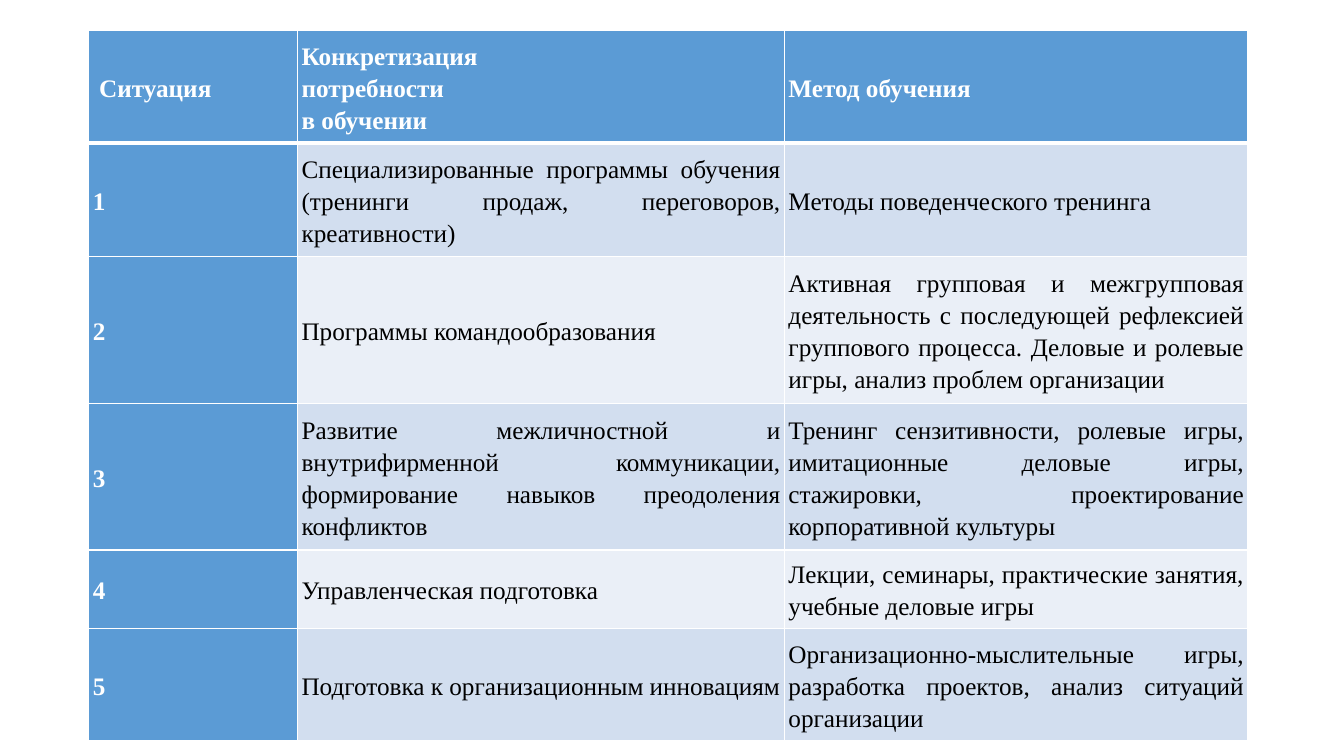
"""Build a slide with a table that matches training needs to training methods."""
from dataclasses import dataclass

from lxml.etree import SubElement
from pptx import Presentation
from pptx.dml.color import RGBColor as Color
from pptx.enum.text import MSO_VERTICAL_ANCHOR as Anchor, PP_PARAGRAPH_ALIGNMENT as Align
from pptx.oxml.ns import qn
from pptx.slide import Slide
from pptx.table import _Cell as Cell
from pptx.util import Cm, Pt


@dataclass(frozen=True)
class Theme:
    """Colours, type and line sizes of the slide."""
    accent: str = "5B9BD5"
    bands: tuple[str, str] = ("D2DEEF", "EAEFF7")
    light: str = "FFFFFF"
    dark: str = "000000"
    font: str = "Times New Roman"
    size: float = 18
    leading: float = 1.15
    grid_line: float = 1
    header_line: float = 3


@dataclass(frozen=True)
class TableRow:
    """One table row: its height in centimetres and its three texts."""
    height: float
    situation: str
    need: str
    method: str


THEME = Theme()
COLUMN_WIDTHS = (5.26, 12.27, 11.68)
CELL_MARGIN = Cm(0.1)
ROWS = (
    TableRow(2.85, " Ситуация", "Конкретизация \vпотребности \vв обучении", "Метод обучения"),
    TableRow(2.85, "1",
             "Специализированные программы обучения (тренинги продаж, переговоров, креативности)",
             "Методы поведенческого тренинга"),
    TableRow(3.7, "2", "Программы командообразования",
             "Активная групповая и межгрупповая деятельность с последующей рефлексией "
             "группового процесса. Деловые и ролевые игры, анализ проблем организации"),
    TableRow(3.7, "3",
             "Развитие межличностной и внутрифирменной коммуникации, "
             "формирование навыков преодоления конфликтов",
             "Тренинг сензитивности, ролевые игры, имитационные деловые игры, "
             "стажировки, проектирование корпоративной культуры"),
    TableRow(1.97, "4", "Управленческая подготовка",
             "Лекции, семинары, практические занятия, учебные деловые игры"),
    TableRow(2.84, "5", "Подготовка к организационным инновациям",
             "Организационно-мыслительные игры, разработка проектов, анализ ситуаций организации"),
)


def set_borders(cell: Cell, top: float, bottom: float) -> None:
    """Draw the four cell borders, with widths in points."""
    properties = cell._tc.get_or_add_tcPr()
    widths = {"L": THEME.grid_line, "R": THEME.grid_line, "T": top, "B": bottom}
    for side, width in widths.items():
        line = SubElement(properties, qn(f"a:ln{side}"), w=str(Pt(width)))
        fill = SubElement(line, qn("a:solidFill"))
        SubElement(fill, qn("a:srgbClr"), val=THEME.light)


def fill_cell(cell: Cell, text: str, fill: str, heading: bool) -> None:
    """Write one cell as a heading or as body text."""
    cell.fill.solid()
    cell.fill.fore_color.rgb = Color.from_string(fill)
    cell.vertical_anchor = Anchor.MIDDLE
    cell.margin_left = cell.margin_right = CELL_MARGIN
    cell.margin_top = cell.margin_bottom = CELL_MARGIN
    para = cell.text_frame.paragraphs[0]
    para.text = text
    para.alignment = Align.JUSTIFY
    para.line_spacing = THEME.leading
    para.font.name = THEME.font
    para.font.size = Pt(THEME.size)
    para.font.bold = heading
    para.font.color.rgb = Color.from_string(THEME.light if heading else THEME.dark)


def add_training_table(page: Slide) -> None:
    """Place the training table on the page."""
    table = page.shapes.add_table(
        len(ROWS), len(COLUMN_WIDTHS), Cm(2.24), Cm(0.76),
        Cm(sum(COLUMN_WIDTHS)), Cm(sum(row.height for row in ROWS))).table
    table.first_col = True
    for column, width in zip(table.columns, COLUMN_WIDTHS):
        column.width = Cm(width)
    for row_index, row in enumerate(ROWS):
        table.rows[row_index].height = Cm(row.height)
        top = THEME.header_line if row_index == 1 else THEME.grid_line
        bottom = THEME.header_line if row_index == 0 else THEME.grid_line
        for column_index, text in enumerate((row.situation, row.need, row.method)):
            cell = table.cell(row_index, column_index)
            heading = row_index == 0 or column_index == 0
            fill = THEME.accent if heading else THEME.bands[(row_index - 1) % 2]
            set_borders(cell, top, bottom)
            fill_cell(cell, text, fill, heading)


def main() -> None:
    """Create and save the deck."""
    deck = Presentation()
    deck.slide_width, deck.slide_height = Cm(33.87), Cm(19.05)
    page = deck.slides.add_slide(deck.slide_layouts[6])
    add_training_table(page)
    deck.save("out.pptx")


if __name__ == "__main__":
    main()
